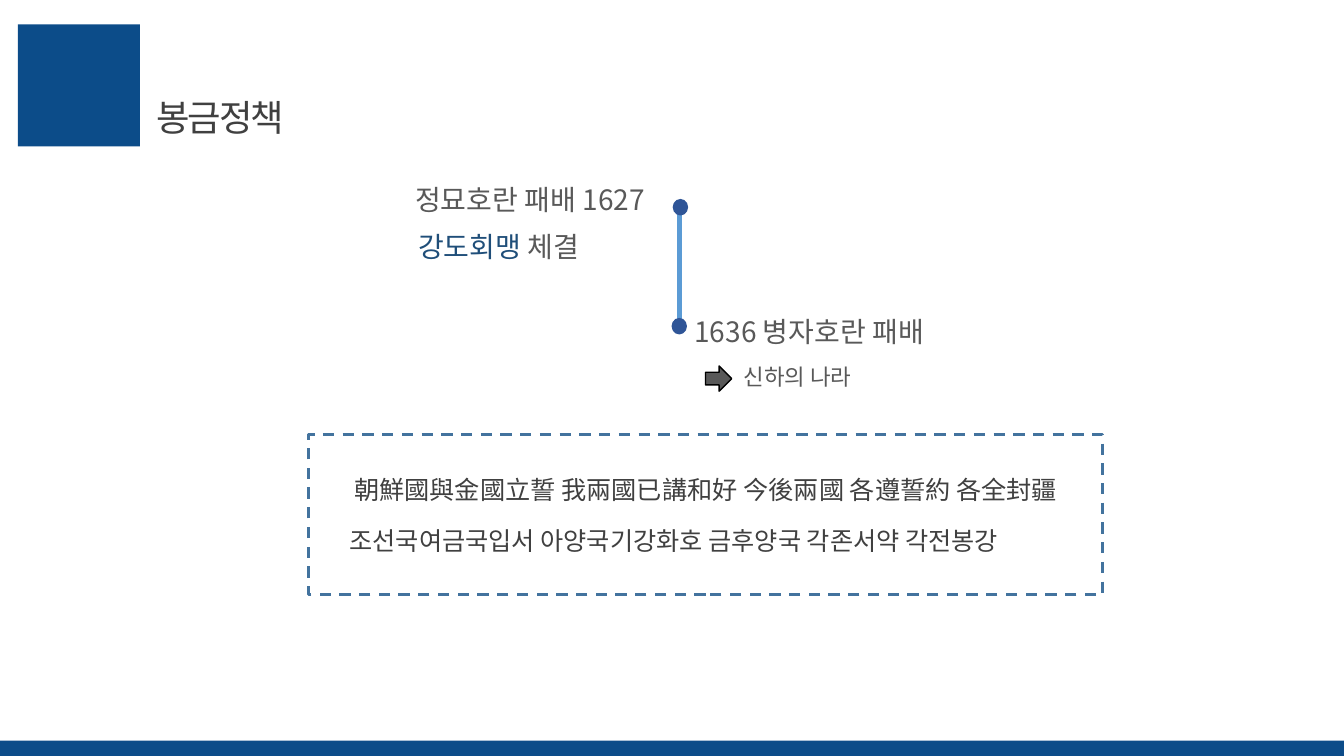
from dataclasses import dataclass

from lxml.etree import SubElement
from pptx import Presentation
from pptx.dml.color import RGBColor
from pptx.enum.dml import MSO_LINE
from pptx.enum.shapes import MSO_CONNECTOR, MSO_SHAPE
from pptx.enum.text import MSO_ANCHOR, MSO_AUTO_SIZE, PP_ALIGN
from pptx.oxml.ns import qn
from pptx.util import Pt


@dataclass(frozen=True)
class Theme:
    """Hold the font, colours and type sizes of the slide."""

    font: str = "Noto Sans CJK KR"
    brand: str = "0C4C89"
    dark: str = "404040"
    gray: str = "595959"
    accent: str = "1F4E79"
    timeline: str = "5B9BD5"
    marker: str = "2F5597"
    frame: str = "43739E"
    black: str = "000000"
    title_size: float = 26
    event_size: float = 20
    quote_size: float = 18
    note_size: float = 16


THEME = Theme()


def place(shape, left, top, width, height):
    """Set the position and size of a shape in points."""
    shape.left, shape.top = Pt(left), Pt(top)
    shape.width, shape.height = Pt(width), Pt(height)


def write_text(shape, parts, size, align=PP_ALIGN.LEFT, tracking=None):
    """Fill a shape with one paragraph of (text, colour) parts."""
    frame = shape.text_frame
    frame.word_wrap = True
    frame.auto_size = MSO_AUTO_SIZE.NONE
    frame.vertical_anchor = MSO_ANCHOR.MIDDLE
    frame.margin_top, frame.margin_bottom = Pt(2), Pt(5)
    paragraph = frame.paragraphs[0]
    paragraph.alignment = align
    paragraph.line_spacing = 1.0
    for text, color in parts:
        run = paragraph.add_run()
        run.text = text
        run.font.size = Pt(size)
        run.font.color.rgb = RGBColor.from_string(color)
        run.font.name = THEME.font
        properties = run._r.get_or_add_rPr()
        SubElement(properties, qn("a:ea"), typeface=THEME.font)
        if tracking is not None:
            properties.set("spc", str(round(tracking * 100)))


def add_text(slide, box, *parts, **text_format):
    """Add a text box holding one formatted paragraph."""
    shape = slide.shapes.add_textbox(*map(Pt, box))
    write_text(shape, parts, **text_format)


def add_figure(slide, kind, box, fill=None, line=None, line_width=1, dash=None):
    """Add a preset shape with an optional fill and outline."""
    shape = slide.shapes.add_shape(kind, *map(Pt, box))
    shape.shadow.inherit = False
    if fill:
        shape.fill.solid()
        shape.fill.fore_color.rgb = RGBColor.from_string(fill)
    else:
        shape.fill.background()
    if line:
        shape.line.color.rgb = RGBColor.from_string(line)
        shape.line.width = Pt(line_width)
        shape.line.dash_style = dash
    else:
        shape.line.fill.background()


def add_line(slide, start, end, color, width):
    """Add a straight line without a shadow."""
    line = slide.shapes.add_connector(MSO_CONNECTOR.STRAIGHT, *map(Pt, start + end))
    line.line.color.rgb = RGBColor.from_string(color)
    line.line.width = Pt(width)
    SubElement(line._element.spPr, qn("a:effectLst"))


def add_header(slide, slide_width):
    """Add the title with its square and the bottom band."""
    add_figure(slide, MSO_SHAPE.RECTANGLE, (12.8, 17.4, 87.1, 87.1), fill=THEME.brand)
    add_figure(slide, MSO_SHAPE.RECTANGLE, (0, 529, slide_width, 11), fill=THEME.brand)
    place(slide.shapes.title, 104.5, 65.5, 399.6, 39)
    write_text(slide.shapes.title, [("봉금정책", THEME.dark)],
               size=THEME.title_size, tracking=-1.5)


def add_timeline(slide):
    """Add the two dated events and the line that joins them."""
    size = THEME.event_size
    add_text(slide, (289.4, 126.7, 200, 33.8), ("정묘호란 패배 1627", THEME.gray), size=size)
    add_line(slide, (485.3, 147.6), (485.3, 236.2), THEME.timeline, 3)
    for left, top in ((480.2, 227.6), (481, 142.6)):
        add_figure(slide, MSO_SHAPE.OVAL, (left, top, 10, 10.8),
                   fill=THEME.marker, line=THEME.marker)
    add_text(slide, (488.9, 222.5, 204.5, 31.7), ("1636 병자호란 패배", THEME.gray), size=size)
    add_text(slide, (291.6, 161.3, 170, 31.7), ("강도회맹", THEME.accent),
             (" 체결", THEME.gray), size=size)
    add_figure(slide, MSO_SHAPE.RIGHT_ARROW, (504, 261.4, 18.7, 18),
               fill=THEME.gray, line=THEME.black)
    add_text(slide, (524.2, 257, 167, 26.6), ("신하의 나라", THEME.gray), size=THEME.note_size)


def add_quote(slide):
    """Add the dashed frame with the oath and its reading."""
    size = THEME.quote_size
    add_figure(slide, MSO_SHAPE.RECTANGLE, (220.3, 310.3, 567.4, 114.5),
               line=THEME.frame, line_width=2, dash=MSO_LINE.DASH)
    add_text(slide, (213.1, 337, 581.8, 28.8),
             ("朝鮮國與金國立誓 我兩國已講和好 今後兩國 各遵誓約 各全封疆", THEME.dark),
             size=size, align=PP_ALIGN.CENTER)
    add_text(slide, (242.6, 373, 532.8, 28.8),
             ("조선국여금국입서 아양국기강화호 금후양국 각존서약 각전봉강", THEME.dark), size=size)


def main():
    """Build the slide and save the presentation."""
    presentation = Presentation()
    presentation.slide_width, presentation.slide_height = Pt(960), Pt(540)
    slide = presentation.slides.add_slide(presentation.slide_layouts[5])
    add_header(slide, 960)
    add_timeline(slide)
    add_quote(slide)
    presentation.save("out.pptx")


if __name__ == "__main__":
    main()
